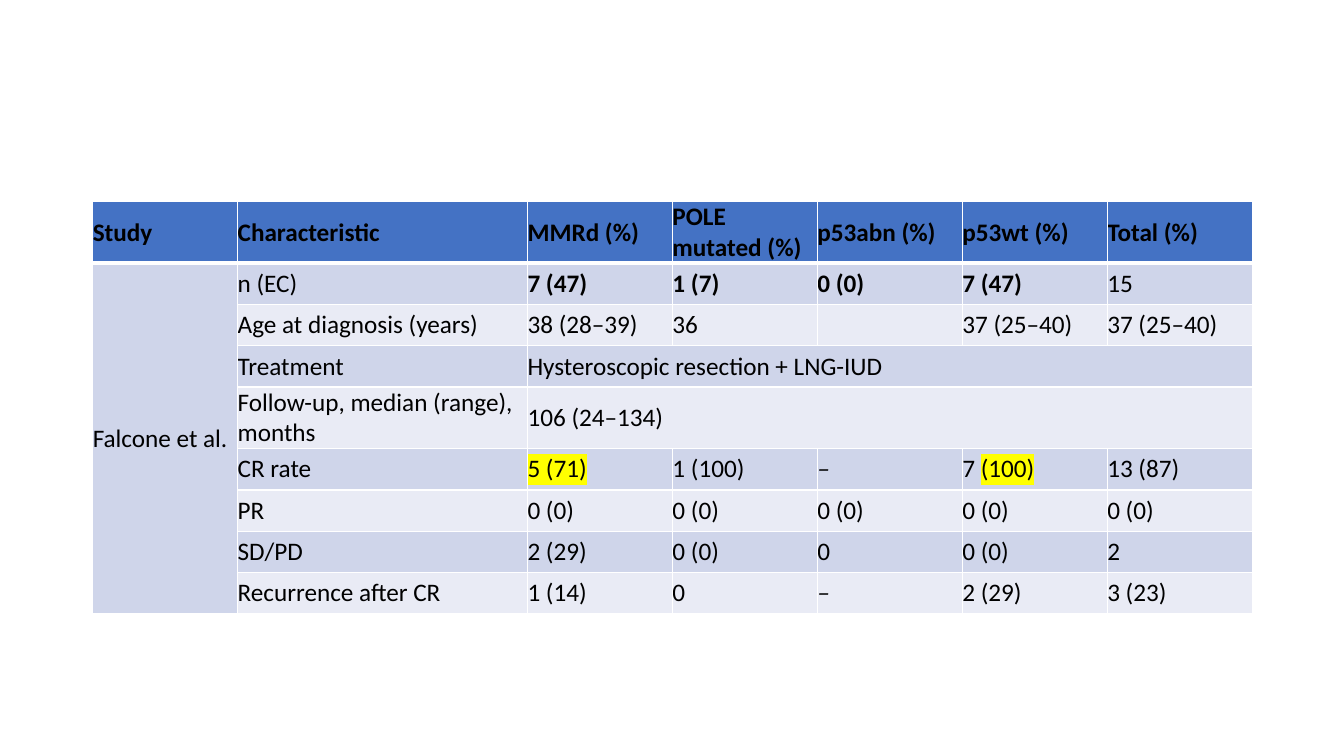
from dataclasses import dataclass

import pptx
import pptx.dml.color
import pptx.enum.text
import pptx.oxml
import pptx.oxml.ns
import pptx.util
from pptx.util import Inches


@dataclass(frozen=True)
class Theme:
    font: str = "Calibri"
    size: int = 18
    text: str = "000000"
    header: str = "4472C4"
    bands: tuple = ("CFD5EA", "E9EBF5")
    border: str = "FFFFFF"
    highlight: str = "FFFF00"
    thin: int = 1
    thick: int = 3


@dataclass(frozen=True)
class Span:
    text: str
    bold: bool = False
    italic: bool = False
    marked: bool = False


THEME = Theme()
DASH = Span("–", italic=True)
COLUMN_SHARES = (1, 2, 1, 1, 1, 1, 1)
HEADINGS = ("Study", "Characteristic", "MMRd (%)", "POLE mutated (%)",
            "p53abn (%)", "p53wt (%)", "Total (%)")
STUDY = "Falcone et al."

# Each row: characteristic, then its values; a single value spans all groups
RESULTS = (
    ("n (EC)", *(Span(count, bold=True) for count in ("7 (47)", "1 (7)", "0 (0)", "7 (47)")), "15"),
    ("Age at diagnosis (years)", "38 (28–39)", "36", "", "37 (25–40)", "37 (25–40)"),
    ("Treatment", "Hysteroscopic resection + LNG-IUD"),
    ("Follow-up, median (range), months", "106 (24–134)"),
    ("CR rate", Span("5 (71)", marked=True), "1 (100)", DASH,
     (Span("7 "), Span("(100)", marked=True)), "13 (87)"),
    ("PR", *["0 (0)"] * 5),
    ("SD/PD", "2 (29)", "0 (0)", "0", "0 (0)", "2"),
    ("Recurrence after CR", "1 (14)", "0", DASH, "2 (29)", "3 (23)"),
)


def rgb(value):
    return pptx.dml.color.RGBColor.from_string(value)


def highlight(run):
    mark = pptx.oxml.parse_xml(
        f'<a:highlight {pptx.oxml.ns.nsdecls("a")}>'
        f'<a:srgbClr val="{THEME.highlight}"/></a:highlight>')
    fill = run.font._element.find(pptx.oxml.ns.qn("a:solidFill"))
    fill.addnext(mark)


def write(cell, content):
    """Accepts plain text, one Span, or a tuple of Spans."""
    if isinstance(content, str):
        content = Span(content)
    spans = content if isinstance(content, tuple) else (content,)
    paragraph = cell.text_frame.paragraphs[0]
    for span in spans:
        if not span.text:
            continue
        run = paragraph.add_run()
        run.text = span.text
        run.font.name = THEME.font
        run.font.size = pptx.util.Pt(THEME.size)
        run.font.bold = span.bold
        run.font.italic = span.italic
        run.font.color.rgb = rgb(THEME.text)
        if span.marked:
            highlight(run)


def set_borders(cell, top, bottom):
    properties = cell._tc.get_or_add_tcPr()
    widths = {"L": THEME.thin, "R": THEME.thin, "T": top, "B": bottom}
    for position, (side, width) in enumerate(widths.items()):
        line = pptx.oxml.parse_xml(
            f'<a:ln{side} {pptx.oxml.ns.nsdecls("a")} w="{pptx.util.Pt(width)}">'
            f'<a:solidFill><a:srgbClr val="{THEME.border}"/></a:solidFill></a:ln{side}>')
        properties.insert(position, line)


def format_cell(cell, row):
    cell.margin_left = cell.margin_right = cell.margin_top = cell.margin_bottom = 0
    cell.vertical_anchor = pptx.enum.text.MSO_ANCHOR.MIDDLE
    cell.fill.solid()
    cell.fill.fore_color.rgb = rgb(THEME.bands[(row - 1) % 2] if row else THEME.header)
    set_borders(cell,
                top=THEME.thick if row == 1 else THEME.thin,
                bottom=THEME.thick if row == 0 else THEME.thin)


def add_results_table(slide):
    row_count, column_count = len(RESULTS) + 1, len(HEADINGS)
    width, row_height = Inches(11.5), Inches(0.41)
    table = slide.shapes.add_table(row_count, column_count, Inches(0.92), Inches(2),
                                   width, row_height * row_count).table
    for column, share in zip(table.columns, COLUMN_SHARES):
        column.width = width * share // sum(COLUMN_SHARES)
    for row in range(row_count):
        table.rows[row].height = row_height
        for column in range(column_count):
            format_cell(table.cell(row, column), row)

    # Header
    for column, heading in enumerate(HEADINGS):
        write(table.cell(0, column), Span(heading, bold=True))

    # Study name beside all of its results
    table.cell(1, 0).merge(table.cell(row_count - 1, 0))
    write(table.cell(1, 0), STUDY)

    # Results
    for row, result in enumerate(RESULTS, start=1):
        if len(result) == 2:
            table.cell(row, 2).merge(table.cell(row, column_count - 1))
        for column, content in enumerate(result, start=1):
            write(table.cell(row, column), content)


def main():
    deck = pptx.Presentation()
    deck.slide_width, deck.slide_height = Inches(13.33), Inches(7.5)
    blank_layout = deck.slide_layouts[6]
    add_results_table(deck.slides.add_slide(blank_layout))
    deck.save("out.pptx")


if __name__ == "__main__":
    main()
